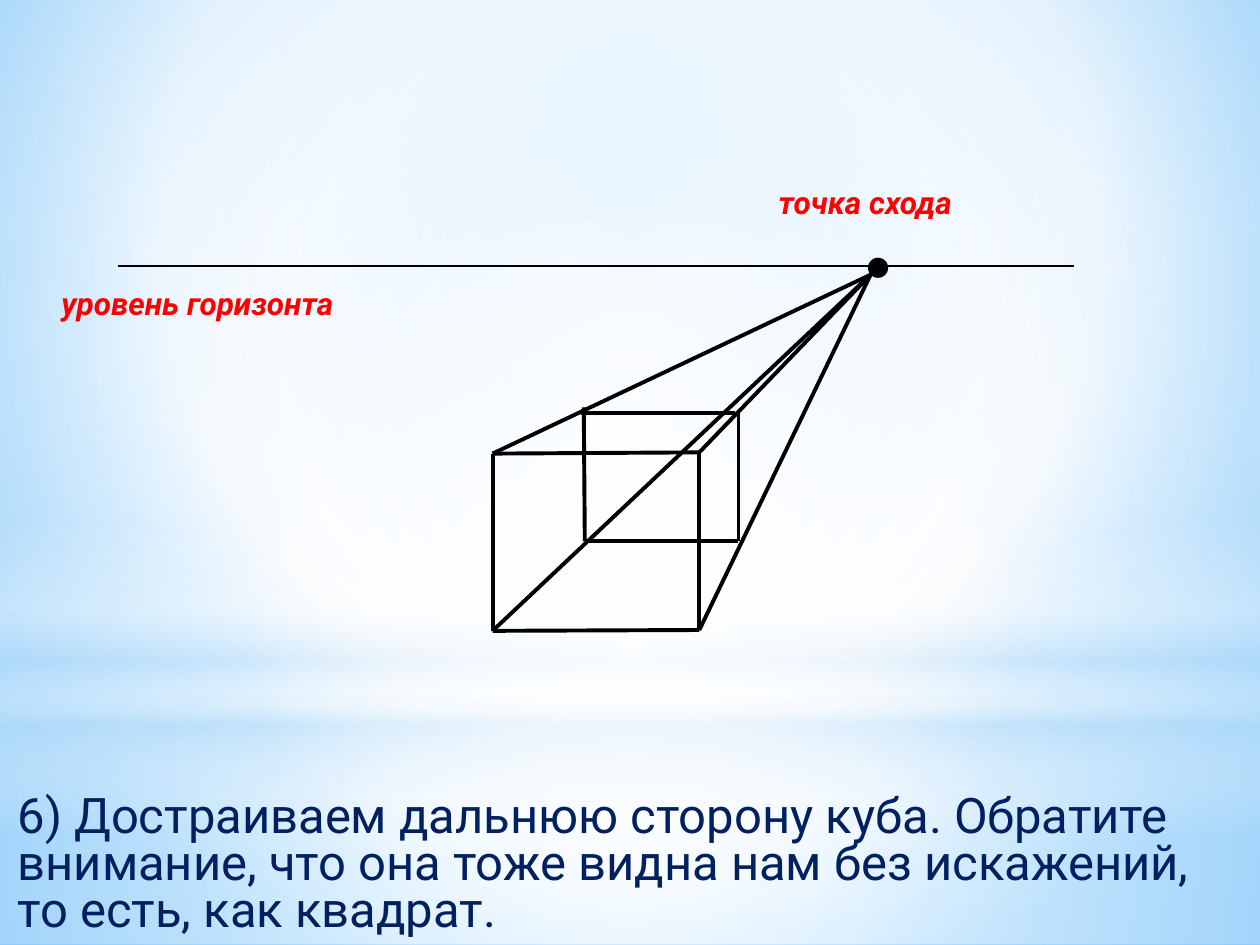
from lxml import etree
from pptx import Presentation
from pptx.dml.color import RGBColor
from pptx.enum.shapes import MSO_CONNECTOR, MSO_SHAPE
from pptx.enum.text import MSO_AUTO_SIZE
from pptx.oxml.ns import qn
from pptx.util import Pt

STRAIGHT = MSO_CONNECTOR.STRAIGHT
RECTANGLE = MSO_SHAPE.RECTANGLE
OVAL = MSO_SHAPE.OVAL
FIT_SHAPE = MSO_AUTO_SIZE.SHAPE_TO_FIT_TEXT

BLACK = RGBColor(0x00, 0x00, 0x00)
WHITE = RGBColor(0xFF, 0xFF, 0xFF)
RED = RGBColor(0xFF, 0x00, 0x00)
NAVY = RGBColor(0x00, 0x20, 0x60)
SKY = RGBColor(0x9E, 0xD5, 0xFF)
BLUE = RGBColor(0x5B, 0xB9, 0xFF)
PALE = RGBColor(0xB4, 0xDC, 0xFA)

LABEL = {"name": "Roboto", "size": Pt(18), "bold": True, "italic": True}
BODY = {"name": "Roboto", "size": Pt(28)}
CENTRE = (50, 50, 50, 50)


class SlideBuilder:
    def __init__(self, slide, edge_width):
        self.slide = slide
        self.edge_width = edge_width

    def gradient(self, fill, element, stops, focus=None):
        fill.gradient()
        gradient = element.xpath(".//a:gradFill")[0]
        for child in list(gradient):
            gradient.remove(child)
        stop_list = etree.SubElement(gradient, qn("a:gsLst"))
        for position, color, opacity in stops:
            stop = etree.SubElement(stop_list, qn("a:gs"), pos=str(position * 1000))
            tint = etree.SubElement(stop, qn("a:srgbClr"), val=str(color))
            if opacity < 100:
                etree.SubElement(tint, qn("a:alpha"), val=str(opacity * 1000))
        if focus is None:
            etree.SubElement(gradient, qn("a:lin"), ang="5400000", scaled="0")
        else:
            path = etree.SubElement(gradient, qn("a:path"), path="circle")
            sides = {side: str(value * 1000) for side, value in zip("ltrb", focus)}
            etree.SubElement(path, qn("a:fillToRect"), **sides)

    def background(self, stops, focus):
        self.gradient(self.slide.background.fill, self.slide.element, stops, focus)

    def shape(self, kind, box):
        shape = self.slide.shapes.add_shape(kind, *map(Pt, box))
        shape.shadow.inherit = False
        shape.line.fill.background()
        return shape

    def glow(self, kind, box, stops, focus=None):
        shape = self.shape(kind, box)
        self.gradient(shape.fill, shape.element, stops, focus)

    def dot(self, box, color):
        shape = self.shape(OVAL, box)
        shape.fill.solid()
        shape.fill.fore_color.rgb = color

    def line(self, start, end, width=None):
        line = self.slide.shapes.add_connector(STRAIGHT, *map(Pt, start + end))
        line.line.color.rgb = BLACK
        line.line.width = Pt(width or self.edge_width)
        properties = line.element.find(qn("p:spPr"))
        etree.SubElement(properties, qn("a:effectLst"))

    def text(self, text, box, style, color, wrap=False, spacing=None):
        shape = self.slide.shapes.add_textbox(*map(Pt, box))
        frame = shape.text_frame
        frame.word_wrap = wrap
        frame.auto_size = FIT_SHAPE
        paragraph = frame.paragraphs[0]
        paragraph.line_spacing = spacing
        run = paragraph.add_run()
        run.text = text
        for name, value in style.items():
            setattr(run.font, name, value)
        run.font.color.rgb = color


def main():
    presentation = Presentation()
    presentation.slide_width = Pt(720)
    presentation.slide_height = Pt(540)
    slide = presentation.slides.add_slide(presentation.slide_layouts[6])
    builder = SlideBuilder(slide, edge_width=2.25)

    builder.background(
        [(0, SKY, 100), (60, WHITE, 100), (100, BLUE, 100)], (20, 10, 20, 60)
    )
    builder.glow(
        RECTANGLE, (0, 402, 720, 138),
        [(0, WHITE, 91), (37, WHITE, 76), (100, PALE, 79)], CENTRE,
    )
    builder.glow(
        RECTANGLE, (0, 0, 720, 402),
        [(0, WHITE, 89), (48, WHITE, 62), (100, PALE, 79)], CENTRE,
    )
    builder.glow(
        RECTANGLE, (0, 297, 720, 180),
        [(0, WHITE, 0), (29, WHITE, 30), (45, PALE, 40),
         (55, WHITE, 26), (65, PALE, 60), (100, WHITE, 0)],
    )
    builder.glow(
        OVAL, (0, 126, 720, 402), [(0, WHITE, 100), (56, WHITE, 0)], CENTRE
    )

    builder.line((67.5, 152), (613.5, 152), width=0.75)

    vanishing_point = (497.5, 157)
    front_top_left, front_top_right = (281.5, 259.2), (399.6, 258.5)
    front_bottom_left, front_bottom_right = (281.5, 360.5), (399.6, 360)
    front = [front_top_left, front_top_right, front_bottom_right, front_bottom_left]
    for index, corner in enumerate(front):
        builder.line(corner, front[(index + 1) % len(front)])
        builder.line(vanishing_point, corner)

    builder.line((332, 236.2), (419.8, 236.2))
    builder.line((422, 236.2), (422, 309.3))
    builder.line((422, 309.3), (334.2, 309.3))
    builder.line((333.6, 232.8), (334.2, 309.3))

    builder.dot((496, 147.3, 11.5, 11.5), BLACK)

    builder.text("точка схода", (437.8, 100.8, 127.4, 29), LABEL, RED)
    builder.text("уровень горизонта", (28, 159, 194.4, 29), LABEL, RED)
    builder.text(
        "6) Достраиваем дальнюю сторону куба. Обратите внимание, "
        "что она тоже видна нам без искажений, то есть, как квадрат.",
        (3, 451.4, 717, 88.6), BODY, NAVY, wrap=True, spacing=0.8,
    )

    presentation.save("out.pptx")


if __name__ == "__main__":
    main()
